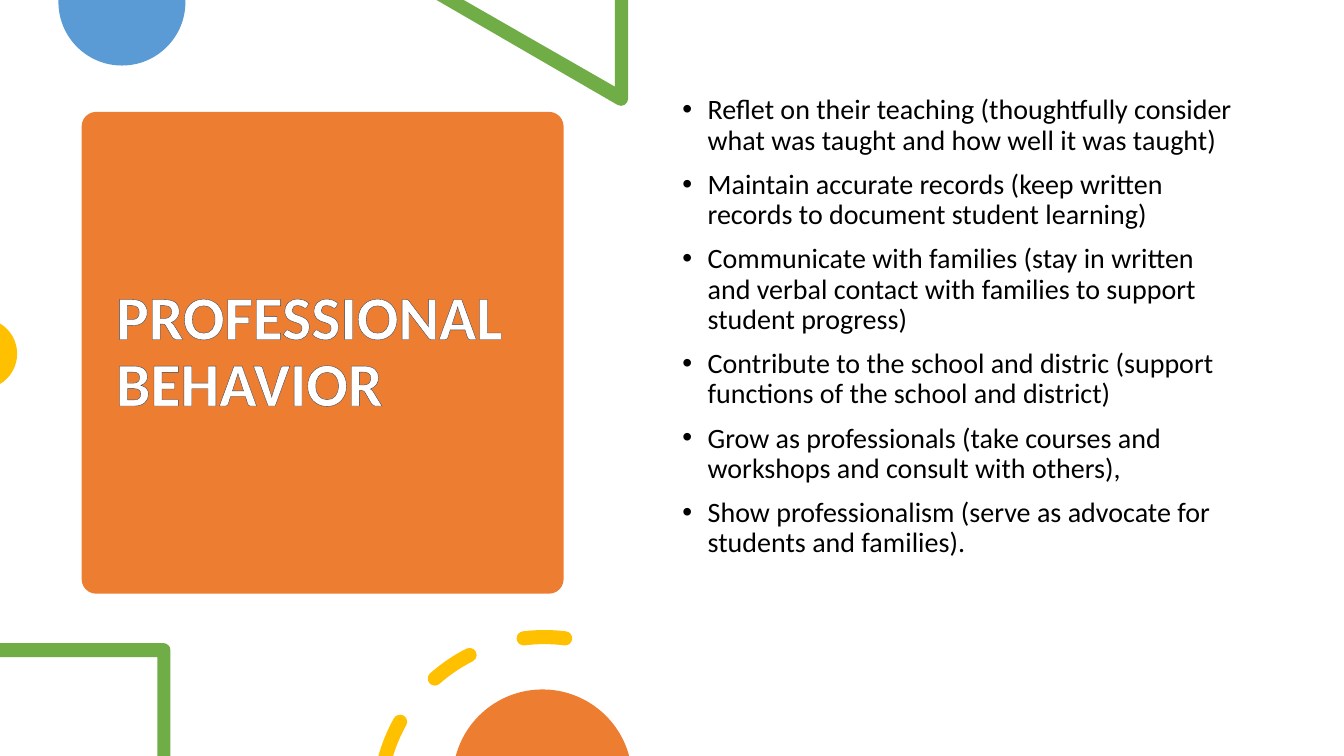
import math

import lxml.etree
import pptx
import pptx.dml.color
import pptx.enum.shapes
import pptx.enum.text
import pptx.oxml.ns
import pptx.util
from pptx.oxml.ns import qn
from pptx.util import Inches

ORANGE = pptx.dml.color.RGBColor(0xED, 0x7D, 0x31)
BLUE = pptx.dml.color.RGBColor(0x5B, 0x9B, 0xD5)
GREEN = pptx.dml.color.RGBColor(0x70, 0xAD, 0x47)
YELLOW = pptx.dml.color.RGBColor(0xFF, 0xC0, 0x00)
WHITE = pptx.dml.color.RGBColor(0xFF, 0xFF, 0xFF)
BLACK = pptx.dml.color.RGBColor(0x00, 0x00, 0x00)
SLATE = pptx.dml.color.RGBColor(0x33, 0x3F, 0x50)

DUTIES = [
    "Reflet on their teaching (thoughtfully consider what was taught and how well it was taught)",
    "Maintain accurate records (keep written records to document student learning)",
    "Communicate with families (stay in written and verbal contact with families to support student progress)",
    "Contribute to the school and distric (support functions of the school and district)",
    "Grow as professionals (take courses and workshops and consult with others),",
    "Show professionalism (serve as advocate for students and families).",
]

RING_X, RING_Y, RING_RADIUS = 5.4, 7.96, 1.64
DASH_HALF = 0.07


def polar(x, y, radius, degrees):
    angle = math.radians(degrees)
    return x + radius * math.cos(angle), y + radius * math.sin(angle)


def arc(x, y, radius, start, end):
    pieces = math.ceil(abs(end - start) / 90)
    sweep = (end - start) / pieces
    reach = radius * 4 / 3 * math.tan(math.radians(sweep) / 4)
    steps = [polar(x, y, radius, start)]
    for piece in range(pieces):
        first = start + piece * sweep
        last = first + sweep
        begin, finish = polar(x, y, radius, first), polar(x, y, radius, last)
        leave = polar(*begin, reach, first + 90)
        arrive = polar(*finish, reach, last - 90)
        steps.append((leave, arrive, finish))
    return steps


def paint(shape, color):
    shape.fill.solid()
    shape.fill.fore_color.rgb = color
    shape.line.fill.background()
    shape.shadow.inherit = False


def add_outline(slide, contours, color):
    builder = None
    curved = []
    for start, *steps in contours:
        origin = Inches(start[0]), Inches(start[1])
        if builder is None:
            builder = slide.shapes.build_freeform(*origin)
        else:
            builder.move_to(*origin)
        corners = []
        for step in steps:
            is_curve = len(step) == 3
            curved.append(is_curve)
            corners += step if is_curve else [step]
        builder.add_line_segments([(Inches(x), Inches(y)) for x, y in corners], close=True)
    shape = builder.convert_to_shape()
    bend_segments(shape, curved)
    paint(shape, color)


def bend_segments(shape, curved):
    segments = iter(list(shape.element.iter(qn("a:lnTo"))))
    for is_curve in curved:
        segment = next(segments)
        if is_curve:
            curve = lxml.etree.Element(qn("a:cubicBezTo"))
            segment.addprevious(curve)
            for part in (segment, next(segments), next(segments)):
                curve.append(part[0])
                part.getparent().remove(part)


def ring_edges(outer_start, inner_start, end):
    cap_x, cap_y = polar(RING_X, RING_Y, RING_RADIUS, end)
    return (
        arc(RING_X, RING_Y, RING_RADIUS + DASH_HALF, outer_start, end)
        + arc(cap_x, cap_y, DASH_HALF, end, end + 180)[1:]
        + arc(RING_X, RING_Y, RING_RADIUS - DASH_HALF, end, inner_start)[1:]
    )


def add_ring_dashes(slide):
    dashes = [ring_edges(195.6, 197, 209.2)]
    for start, end in [(228.5, 243.1), (262.8, 277.2)]:
        cap_x, cap_y = polar(RING_X, RING_Y, RING_RADIUS, start)
        start_cap = arc(cap_x, cap_y, DASH_HALF, start + 180, start + 360)[1:]
        dashes.append(ring_edges(start, start, end) + start_cap)
    add_outline(slide, dashes, YELLOW)


def write_text(frame, lines, size, color, bold=False, before=0, after=0, bullet=None,
               outline=None, anchor=pptx.enum.text.MSO_ANCHOR.TOP):
    frame.word_wrap = True
    frame.auto_size = pptx.enum.text.MSO_AUTO_SIZE.NONE
    frame.vertical_anchor = anchor
    for index, line in enumerate(lines):
        paragraph = frame.paragraphs[0] if index == 0 else frame.add_paragraph()
        paragraph.alignment = pptx.enum.text.PP_ALIGN.LEFT
        paragraph.line_spacing = 0.9
        paragraph.space_before = pptx.util.Pt(before)
        paragraph.space_after = pptx.util.Pt(after)
        run = paragraph.add_run()
        run.text = line
        font = run.font
        font.name, font.size, font.bold = "Calibri", pptx.util.Pt(size), bold
        font.fill.solid()
        font.fill.fore_color.rgb = color
        if bullet:
            add_bullet(paragraph, bullet)
        if outline is not None:
            add_text_outline(run, outline)


def add_bullet(paragraph, bullet):
    properties = paragraph._p.get_or_add_pPr()
    properties.set("marL", str(Inches(0.25)))
    properties.set("indent", str(Inches(-0.25)))
    lxml.etree.SubElement(properties, qn("a:buFont")).set("typeface", "Arial")
    lxml.etree.SubElement(properties, qn("a:buChar")).set("char", bullet)


def add_text_outline(run, color):
    line = lxml.etree.Element(qn("a:ln"), w=str(pptx.util.Pt(1)))
    fill = lxml.etree.SubElement(line, qn("a:solidFill"))
    lxml.etree.SubElement(fill, qn("a:srgbClr")).set("val", str(color))
    run._r.get_or_add_rPr().insert(0, line)


def add_title_card(slide):
    card = slide.shapes.add_shape(
        pptx.enum.shapes.MSO_SHAPE.ROUNDED_RECTANGLE,
        Inches(0.81), Inches(1.11), Inches(4.78), Inches(4.78))
    card.adjustments[0] = 0.03
    paint(card, ORANGE)
    title = slide.shapes.title
    title.left, title.top = Inches(1.05), Inches(1.22)
    title.width, title.height = Inches(4.31), Inches(4.56)
    write_text(title.text_frame, ["PROFESSIONAL BEHAVIOR"], 44, WHITE, bold=True, after=6,
               outline=SLATE, anchor=pptx.enum.text.MSO_ANCHOR.MIDDLE)
    title.element.addprevious(card.element)


def add_top_decorations(slide):
    add_outline(slide, [arc(1.21, 0.02, 0.63, 0, 180) + [(0.58, 0), (1.84, 0)]], BLUE)
    triangle = [(6.23, 0), (6.1, 0), (6.1, 0.86), (4.6, 0), (4.33, 0)]
    add_outline(slide, [triangle + arc(6.16, 0.98, 0.07, 120, 0)], GREEN)
    add_outline(slide, [arc(-0.18, 3.51, 0.35, -59, 59)], YELLOW)


def add_bottom_decorations(slide):
    frame = [(1.69, 7.5), (1.56, 7.5), (1.56, 6.52), (0, 6.52), (0, 6.38)]
    add_outline(slide, [frame + arc(1.62, 6.45, 0.07, 270, 360)], GREEN)
    add_ring_dashes(slide)
    add_outline(slide, [arc(5.38, 7.73, 0.89, 195, 345)], ORANGE)


def add_duties(slide):
    duties = slide.shapes.add_textbox(Inches(6.67), Inches(0.9), Inches(5.75), Inches(5.35))
    write_text(duties.text_frame, DUTIES, 20, BLACK, before=10, bullet="•")


def main():
    presentation = pptx.Presentation()
    presentation.slide_width, presentation.slide_height = Inches(13.33), Inches(7.5)
    slide = presentation.slides.add_slide(presentation.slide_layouts.get_by_name("Title Only"))
    add_title_card(slide)
    add_top_decorations(slide)
    add_duties(slide)
    add_bottom_decorations(slide)
    presentation.save("out.pptx")


if __name__ == "__main__":
    main()
